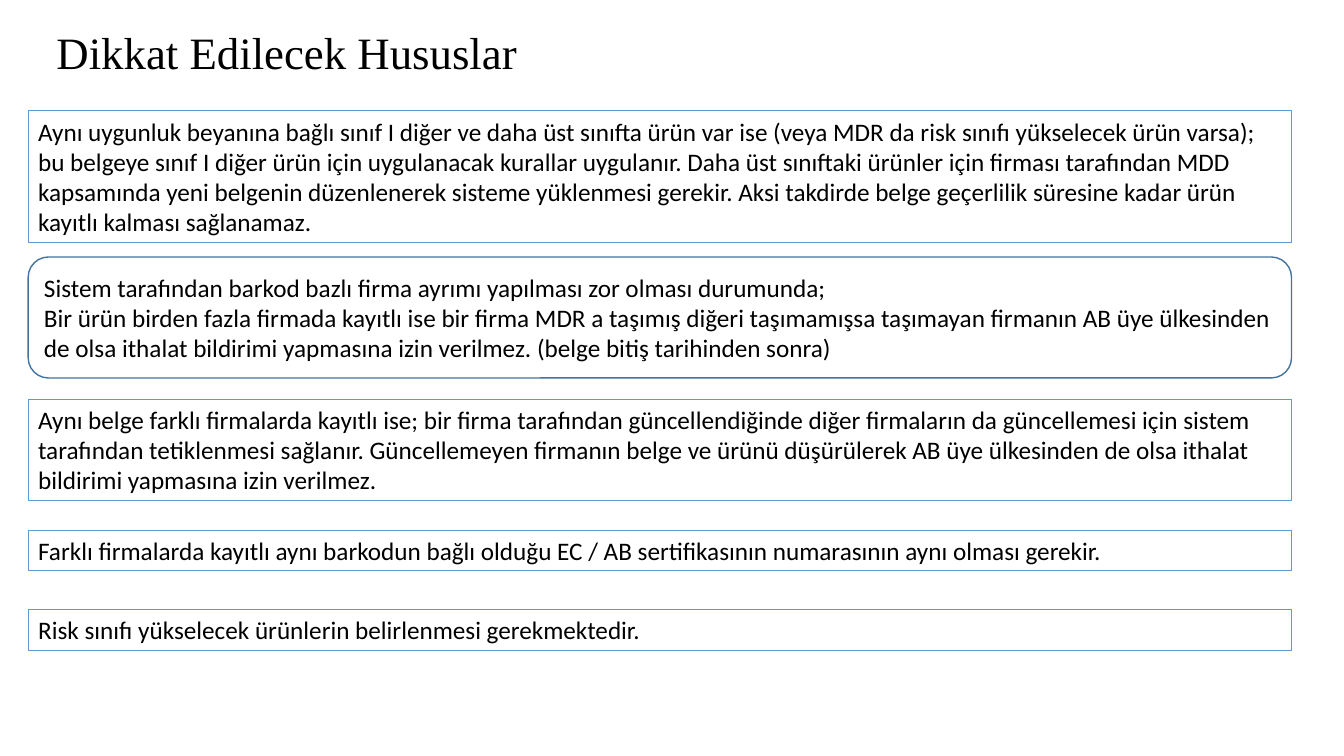
from pptx import Presentation
from pptx.dml.color import RGBColor
from pptx.enum.shapes import MSO_SHAPE
from pptx.enum.text import MSO_ANCHOR, PP_ALIGN
from pptx.util import Inches, Pt

BLACK = RGBColor(0x00, 0x00, 0x00)
WHITE = RGBColor(0xFF, 0xFF, 0xFF)
BLUE = RGBColor(0x5B, 0x9B, 0xD5)
DARK_BLUE = RGBColor(0x43, 0x73, 0x9E)

LEFT, WIDTH = 0.28, 12.53
PLAIN = {"kind": MSO_SHAPE.RECTANGLE, "fill": None, "line": BLUE,
         "weight": 0.75, "anchor": MSO_ANCHOR.TOP}
ROUNDED = {"kind": MSO_SHAPE.ROUNDED_RECTANGLE, "fill": WHITE, "line": DARK_BLUE,
           "weight": 1, "anchor": MSO_ANCHOR.MIDDLE}
TITLE_FONT = {"name": "Times New Roman", "size": Pt(32), "bold": False}
BODY_FONT = {"name": "Calibri", "size": Pt(18)}

NOTES = [
    (1.1, 1.31, PLAIN, [
        "Aynı uygunluk beyanına bağlı sınıf I diğer ve daha üst sınıfta ürün var ise "
        "(veya MDR da risk sınıfı yükselecek ürün varsa); bu belgeye sınıf I diğer ürün "
        "için uygulanacak kurallar uygulanır. Daha üst sınıftaki ürünler için firması "
        "tarafından MDD kapsamında yeni belgenin düzenlenerek sisteme yüklenmesi gerekir. "
        "Aksi takdirde belge geçerlilik süresine kadar ürün kayıtlı kalması sağlanamaz."]),
    (2.55, 1.2, ROUNDED, [
        "Sistem tarafından barkod bazlı firma ayrımı yapılması zor olması durumunda;",
        "Bir ürün birden fazla firmada kayıtlı ise bir firma MDR a taşımış diğeri "
        "taşımamışsa taşımayan firmanın AB üye ülkesinden de olsa ithalat bildirimi "
        "yapmasına izin verilmez. (belge bitiş tarihinden sonra)"]),
    (3.96, 1.01, PLAIN, [
        "Aynı belge farklı firmalarda kayıtlı ise; bir firma tarafından güncellendiğinde "
        "diğer firmaların da güncellemesi için sistem tarafından tetiklenmesi sağlanır. "
        "Güncellemeyen firmanın belge ve ürünü düşürülerek AB üye ülkesinden de olsa "
        "ithalat bildirimi yapmasına izin verilmez."]),
    (5.26, 0.4, PLAIN, [
        "Farklı firmalarda kayıtlı aynı barkodun bağlı olduğu EC / AB sertifikasının "
        "numarasının aynı olması gerekir."]),
    (6.05, 0.4, PLAIN, [
        "Risk sınıfı yükselecek ürünlerin belirlenmesi gerekmektedir."]),
]


def add_run(p, text, font):
    """Add black text to a paragraph with the given font values."""
    r = p.add_run()
    r.text = text
    for name, value in font.items():
        setattr(r.font, name, value)
    r.font.color.rgb = BLACK


def add_title(s, text, left, top, width, height):
    """Place and format the title placeholder."""
    sp = s.shapes.title
    box = {"left": left, "top": top, "width": width, "height": height}
    for name, value in box.items():
        setattr(sp, name, Inches(value))
    tf = sp.text_frame
    tf.word_wrap = True
    tf.vertical_anchor = MSO_ANCHOR.MIDDLE
    p = tf.paragraphs[0]
    p.alignment = PP_ALIGN.LEFT
    p.line_spacing = 0.9
    add_run(p, text, TITLE_FONT)


def add_note(s, left, top, width, height, style, lines):
    """Draw an outlined box with left-aligned paragraphs."""
    sp = s.shapes.add_shape(style["kind"], Inches(left), Inches(top),
                            Inches(width), Inches(height))
    sp.shadow.inherit = False
    if style["fill"] is None:
        sp.fill.background()
    else:
        sp.fill.solid()
        sp.fill.fore_color.rgb = style["fill"]
    sp.line.color.rgb = style["line"]
    sp.line.width = Pt(style["weight"])
    tf = sp.text_frame
    tf.word_wrap = True
    tf.vertical_anchor = style["anchor"]
    for i, line in enumerate(lines):
        p = tf.add_paragraph() if i else tf.paragraphs[0]
        p.alignment = PP_ALIGN.LEFT
        add_run(p, line, BODY_FONT)


def main():
    """Build the slide and save it."""
    prs = Presentation()
    prs.slide_width, prs.slide_height = Inches(13.33), Inches(7.5)
    s = prs.slides.add_slide(prs.slide_layouts[5])
    add_title(s, "Dikkat Edilecek Hususlar", 0.46, 0.13, 11.5, 0.84)
    for top, height, style, lines in NOTES:
        add_note(s, LEFT, top, WIDTH, height, style, lines)
    prs.save("out.pptx")


if __name__ == "__main__":
    main()
